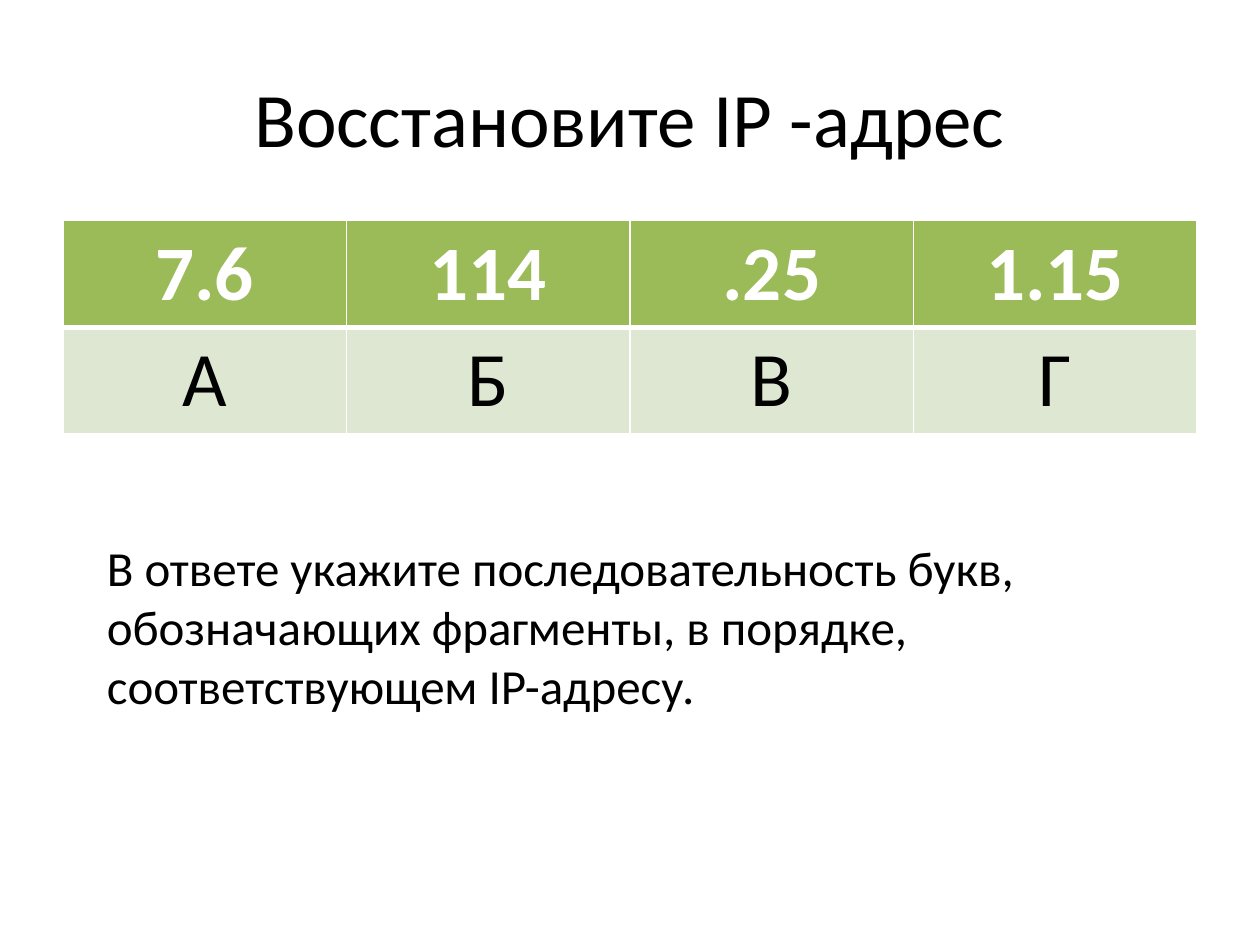
"""Builds a quiz slide about restoring an IP address from its fragments."""
import pptx
import pptx.util
import pptx.dml.color
import pptx.enum.text
import pptx.oxml
import pptx.oxml.ns

Inches, Pt = pptx.util.Inches, pptx.util.Pt
ALIGN = pptx.enum.text.PP_ALIGN
ANCHOR = pptx.enum.text.MSO_ANCHOR
AUTO = pptx.enum.text.MSO_AUTO_SIZE

COLORS = {"text": "000000", "white": "FFFFFF", "header": "9BBB59", "body": "DEE7D1"}
TITLE = "Восстановите IP -адрес"
TASK = ("В ответе укажите последовательность букв, обозначающих фрагменты, "
        "в порядке, соответствующем IP-адресу.")
ROWS = [
    {"cells": ["7.6", "114", ".25", "1.15"], "fill": "header", "color": "white",
     "bold": True, "borders": {"lnL": 1, "lnR": 1, "lnT": 1, "lnB": 3}},
    {"cells": ["А", "Б", "В", "Г"], "fill": "body", "color": "text",
     "bold": False, "borders": {"lnL": 1, "lnR": 1, "lnT": 3, "lnB": 1}},
]
TABLE_BOX = (0.5, 1.75, 9, 1.68)
BOXES = [
    {"text": TITLE, "box": (0.5, 0.3, 9, 1.25), "size": 44, "align": ALIGN.CENTER,
     "frame": {"vertical_anchor": ANCHOR.MIDDLE, "auto_size": AUTO.NONE}},
    {"text": TASK, "box": (0.75, 4.22, 8.27, 1.51), "size": 28, "align": ALIGN.LEFT,
     "frame": {"vertical_anchor": ANCHOR.TOP, "auto_size": AUTO.SHAPE_TO_FIT_TEXT}},
]


def rgb(name):
    return pptx.dml.color.RGBColor.from_string(COLORS[name])


def write(tf, text, size, align, color="text", bold=False):
    p = tf.paragraphs[0]
    p.alignment = align
    r = p.add_run()
    r.text = text
    for key, value in {"name": "Calibri", "size": Pt(size), "bold": bold}.items():
        setattr(r.font, key, value)
    r.font.color.rgb = rgb(color)


def add_border(cell, side, width):
    ln = pptx.oxml.parse_xml(
        f'<a:{side} {pptx.oxml.ns.nsdecls("a")} w="{Pt(width)}"><a:solidFill>'
        f'<a:srgbClr val="{COLORS["white"]}"/></a:solidFill></a:{side}>')
    cell._tc.get_or_add_tcPr().append(ln)


def add_table(slide):
    columns = len(ROWS[0]["cells"])
    table = slide.shapes.add_table(len(ROWS), columns, *map(Inches, TABLE_BOX)).table
    for i, row in enumerate(ROWS):
        for j, text in enumerate(row["cells"]):
            cell = table.cell(i, j)
            for side, width in row["borders"].items():
                add_border(cell, side, width)
            cell.fill.solid()
            cell.fill.fore_color.rgb = rgb(row["fill"])
            write(cell.text_frame, text, 44, ALIGN.CENTER, row["color"], row["bold"])


def add_text(slide, item):
    tf = slide.shapes.add_textbox(*map(Inches, item["box"])).text_frame
    for key, value in {"word_wrap": True, **item["frame"]}.items():
        setattr(tf, key, value)
    write(tf, item["text"], item["size"], item["align"])


def main():
    prs = pptx.Presentation()
    prs.slide_width, prs.slide_height = Inches(10), Inches(7.5)
    slide = prs.slides.add_slide(prs.slide_layouts[6])
    title, task = BOXES
    add_text(slide, title)
    add_table(slide)
    add_text(slide, task)
    prs.save("out.pptx")


if __name__ == "__main__":
    main()
